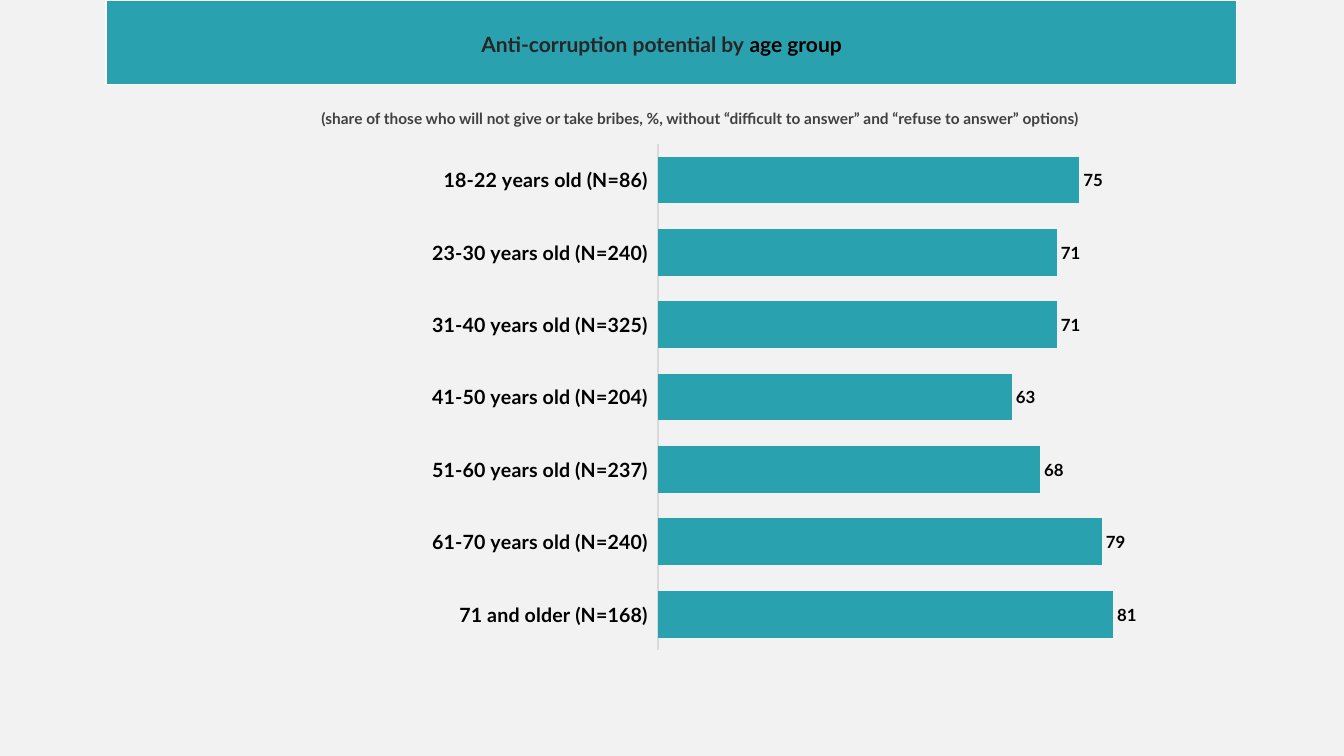
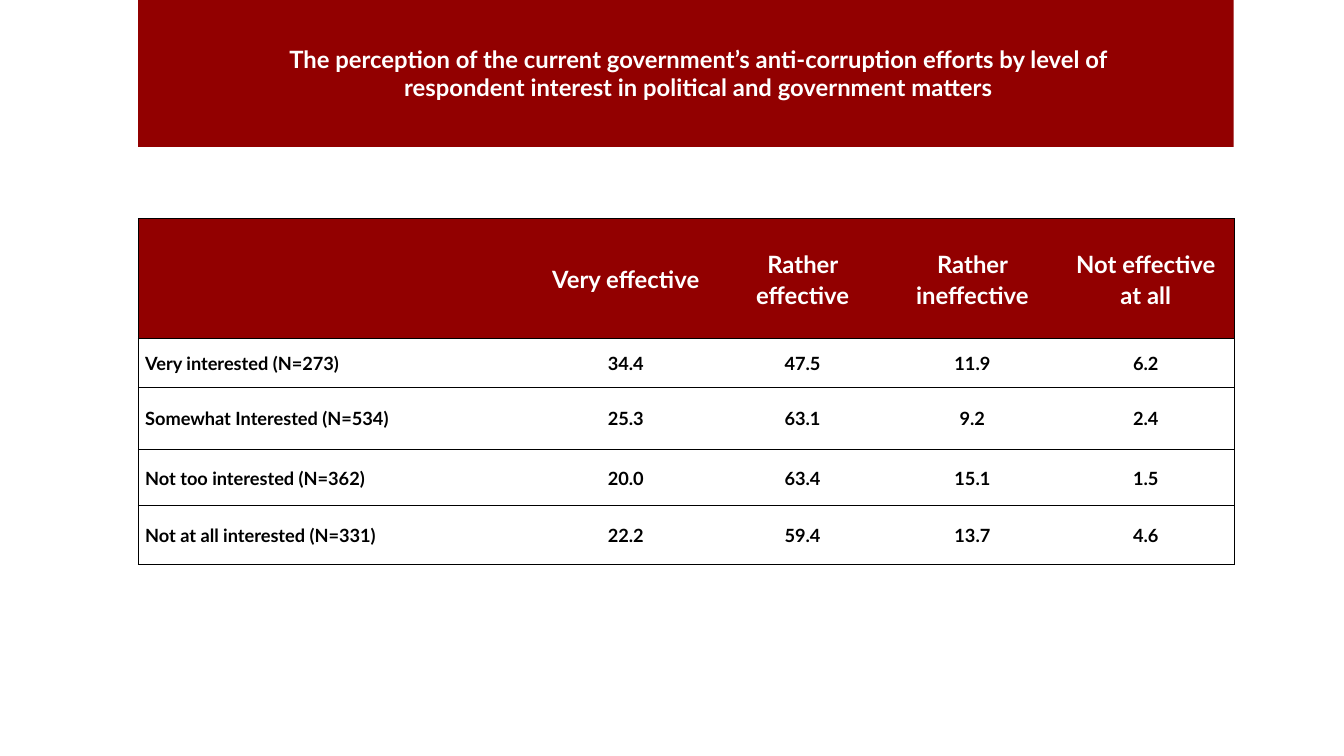
from lxml.etree import SubElement
from pptx import Presentation
from pptx.chart.data import CategoryChartData
from pptx.dml.color import RGBColor
from pptx.enum.chart import XL_CHART_TYPE, XL_LABEL_POSITION, XL_TICK_LABEL_POSITION, XL_TICK_MARK
from pptx.enum.shapes import MSO_SHAPE
from pptx.enum.text import MSO_ANCHOR, PP_ALIGN
from pptx.oxml import parse_xml
from pptx.oxml.ns import nsdecls, qn
from pptx.util import Cm, Pt

TEAL = RGBColor(0x2A, 0xA1, 0xAF)
RED = RGBColor(0x92, 0x00, 0x00)
WHITE = RGBColor(0xFF, 0xFF, 0xFF)
BLACK = RGBColor(0x00, 0x00, 0x00)
DARK = RGBColor(0x26, 0x26, 0x26)
GREY = RGBColor(0x40, 0x40, 0x40)
RULE = RGBColor(0xD9, 0xD9, 0xD9)
PALE = RGBColor(0xF2, 0xF2, 0xF2)
FONT = "Lato"


def style(font, size, color):
    font.name, font.size, font.bold = FONT, Pt(size), True
    font.color.rgb = color


def put(frame, text, size=13, color=BLACK, align=PP_ALIGN.CENTER, space=None):
    para = frame.paragraphs[0]
    para.alignment = align
    if space:
        para.line_spacing = space
    run = para.add_run()
    run.text = text
    style(run.font, size, color)


def edge(cell, sides):
    props = cell._tc.get_or_add_tcPr()
    for side in "LRTB":
        line = SubElement(props, qn(f"a:ln{side}"), w=str(Pt(0.5)))
        if side in sides:
            fill = SubElement(line, qn("a:solidFill"))
            SubElement(fill, qn("a:srgbClr"), val=str(BLACK))
        else:
            SubElement(line, qn("a:noFill"))


class Deck:
    def __init__(self):
        self.show = Presentation()
        self.show.slide_width = Cm(33.87)
        self.show.slide_height = Cm(19.05)
        self.slide = None

    def start(self, color):
        self.slide = self.show.slides.add_slide(self.show.slide_layouts[6])
        fill = self.slide.background.fill
        fill.solid()
        fill.fore_color.rgb = color

    def band(self, box, color, line=None):
        rect = self.slide.shapes.add_shape(MSO_SHAPE.RECTANGLE, *map(Cm, box))
        rect.shadow.inherit = False
        rect.fill.solid()
        rect.fill.fore_color.rgb = color
        if line is None:
            rect.line.fill.background()
        else:
            rect.line.color.rgb = line
            rect.line.width = Pt(1)

    def label(self, box, parts, size):
        frame = self.slide.shapes.add_textbox(*map(Cm, box)).text_frame
        frame.word_wrap = True
        for text, color in parts:
            put(frame, text, size=size, color=color)

    def bars(self, box, names, vals, color, top):
        data = CategoryChartData(number_format="0")
        data.categories = names
        data.add_series("Series 1", vals)
        chart = self.slide.shapes.add_chart(
            XL_CHART_TYPE.BAR_CLUSTERED, *map(Cm, box), data).chart
        chart.has_title = chart.has_legend = False
        style(chart.font, 12, BLACK)

        names_axis = chart.category_axis
        names_axis.reverse_order = True
        names_axis.major_tick_mark = XL_TICK_MARK.NONE
        names_axis.tick_label_position = XL_TICK_LABEL_POSITION.LOW
        names_axis.format.line.color.rgb = RULE
        names_axis.format.line.width = Pt(0.75)
        style(names_axis.tick_labels.font, 14, BLACK)

        scale = chart.value_axis
        scale.visible = scale.has_major_gridlines = False
        scale.minimum_scale, scale.maximum_scale = 0, top

        plot = chart.plots[0]
        plot.gap_width = 55
        plot.vary_by_categories = False
        row = plot.series[0]
        row.invert_if_negative = False
        row.format.fill.solid()
        row.format.fill.fore_color.rgb = color
        labels = row.data_labels
        labels.show_value = True
        labels.position = XL_LABEL_POSITION.OUTSIDE_END
        labels.number_format, labels.number_format_is_linked = "0", False
        style(labels.font, 12, BLACK)
        self.place(chart, x=0.52, y=0, w=0.473, h=0.975)

    def place(self, chart, **parts):
        area = chart._chartSpace.chart.plotArea
        for old in area.findall(qn("c:layout")):
            area.remove(old)
        modes = '<c:layoutTarget val="inner"/><c:xMode val="edge"/><c:yMode val="edge"/>'
        sizes = "".join(f'<c:{key} val="{val}"/>' for key, val in parts.items())
        area.insert(0, parse_xml(
            f'<c:layout {nsdecls("c")}><c:manualLayout>{modes}{sizes}'
            "</c:manualLayout></c:layout>"))

    def table(self, left, top, wide, high, rows, color):
        grid = self.slide.shapes.add_table(
            len(rows), len(wide), Cm(left), Cm(top), Cm(sum(wide)), Cm(sum(high))).table
        grid.first_row = grid.horz_banding = False
        for col, width in zip(grid.columns, wide):
            col.width = Cm(width)
        for r, (row, height) in enumerate(zip(rows, high)):
            grid.rows[r].height = Cm(height)
            for c, text in enumerate(row):
                cell = grid.cell(r, c)
                edge(cell, "TB" + "L" * (c == 0) + "R" * (c == len(wide) - 1))
                cell.vertical_anchor = MSO_ANCHOR.MIDDLE
                cell.margin_left = cell.margin_right = Cm(0.18)
                cell.margin_top = cell.margin_bottom = 0
                if r == 0:
                    cell.fill.solid()
                    cell.fill.fore_color.rgb = color
                else:
                    cell.fill.background()
                if text:
                    put(cell.text_frame, text, space=1.07,
                        size=13 if r else 17, color=BLACK if r else WHITE,
                        align=PP_ALIGN.LEFT if c == 0 else PP_ALIGN.CENTER)

    def save(self):
        self.show.save("out.pptx")


def ages(deck):
    deck.start(PALE)
    deck.label((3.28, 2.62, 28.75, 0.74), [(
        "(share of those who will not give or take bribes, %, without "
        "“difficult to answer” and “refuse to answer” options)", GREY)], 11)
    groups = {
        "18-22 years old (N=86)": 75,
        "23-30 years old (N=240)": 71,
        "31-40 years old (N=325)": 71,
        "41-50 years old (N=204)": 63,
        "51-60 years old (N=237)": 68,
        "61-70 years old (N=240)": 79,
        "71 and older (N=168)": 81,
    }
    deck.bars((2.57, 3.61, 26.95, 13.11), list(groups), list(groups.values()), TEAL, 90)
    deck.band((2.67, 0, 28.5, 2.13), TEAL, line=WHITE)
    deck.label((11.2, 0.66, 10.95, 0.89), [
        ("Anti-corruption potential by", DARK), (" age group", BLACK)], 15)


def views(deck):
    deck.start(WHITE)
    deck.band((3.48, 0, 27.61, 3.7), RED)
    deck.label((5.84, 0.99, 23.52, 1.7), [(
        "The perception of the current government’s anti-corruption efforts by level of "
        "respondent interest in political and government matters", WHITE)], 17)
    rows = [
        ("", "Very effective", "Rather effective", "Rather ineffective", "Not effective at all"),
        ("Very interested (N=273)", "34.4", "47.5", "11.9", "6.2"),
        ("Somewhat Interested (N=534)", "25.3", "63.1", "9.2", "2.4"),
        ("Not too interested (N=362)", "20.0", "63.4", "15.1", "1.5"),
        ("Not at all interested (N=331)", "22.2", "59.4", "13.7", "4.6"),
    ]
    deck.table(3.48, 5.51, (9.98, 4.62, 4.29, 4.27, 4.47),
               (3.02, 1.22, 1.57, 1.42, 1.47), rows, RED)


def main():
    deck = Deck()
    ages(deck)
    views(deck)
    deck.save()


if __name__ == "__main__":
    main()
